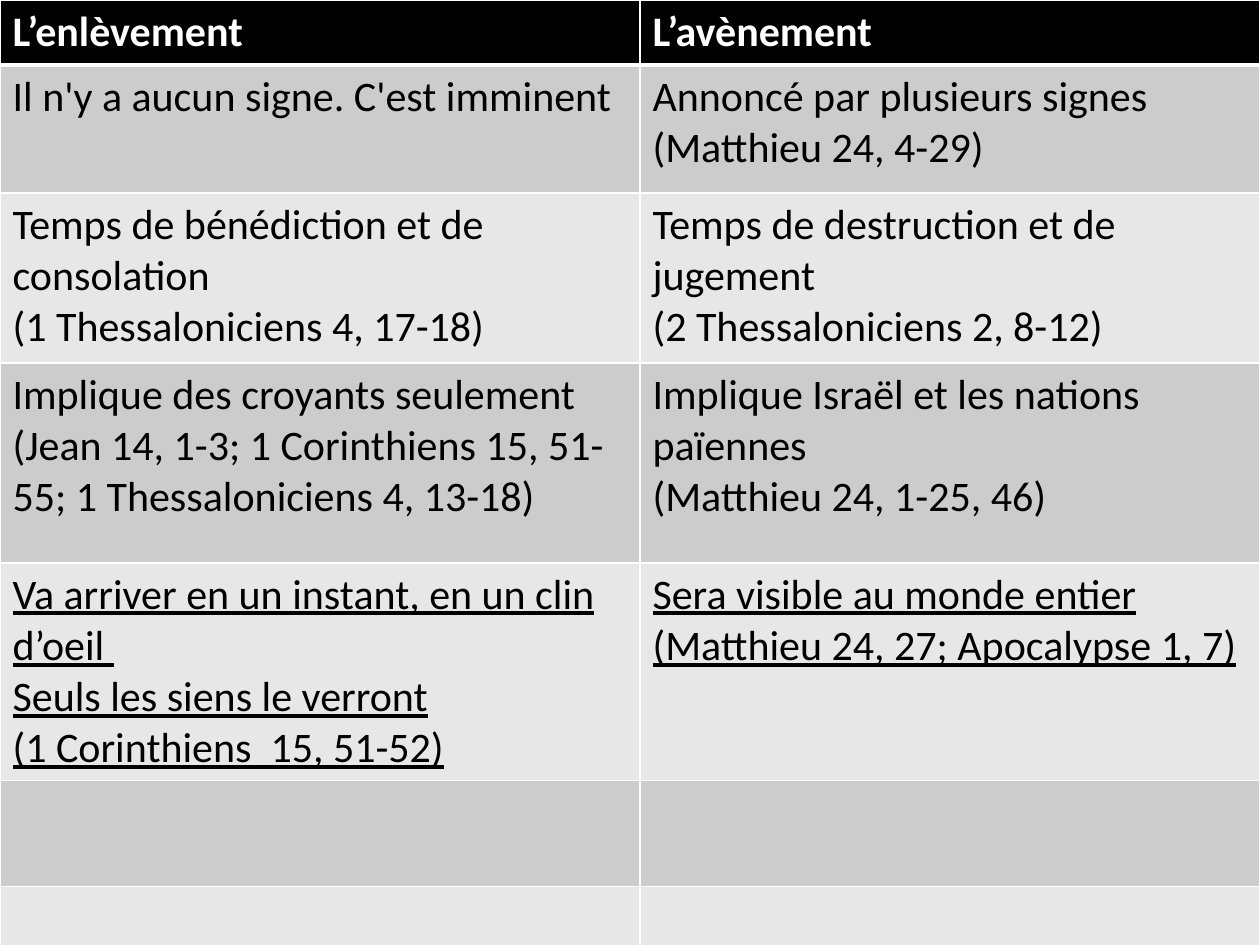
from lxml.etree import SubElement as Sub
from pptx import Presentation
from pptx.dml.color import RGBColor as Rgb
from pptx.oxml.ns import qn
from pptx.util import Pt

SCALE = 914400 / 126
HUES = {"head": "000000", "dark": "CCCCCC", "light": "E7E7E7",
        "ink": "000000", "white": "FFFFFF"}
COLS = [640, 620]
ROWS = [65, 128, 170, 200, 170, 106, 106]
CELLS = [
    (["L’enlèvement"], ["L’avènement"]),
    (["Il n'y a aucun signe. C'est imminent"],
     ["Annoncé par plusieurs signes", "(Matthieu 24, 4-29)"]),
    (["Temps de bénédiction et de consolation", "(1 Thessaloniciens 4, 17-18)"],
     ["Temps de destruction et de jugement", "(2 Thessaloniciens 2, 8-12)"]),
    (["Implique des croyants seulement",
      "(Jean 14, 1-3; 1 Corinthiens 15, 51-55; 1 Thessaloniciens 4, 13-18)"],
     ["Implique Israël et les nations païennes", "(Matthieu 24, 1-25, 46)"]),
    (["Va arriver en un instant, en un clin d’oeil ", "Seuls les siens le verront",
      "(1 Corinthiens  15, 51-52)"],
     ["Sera visible au monde entier", "(Matthieu 24, 27; Apocalypse 1, 7)"]),
    ([], []),
    ([], []),
]
LINED = 4


def px(num):
    return round(num * SCALE)


def write(frame, lines, hue="ink", size=24, face="Calibri", bold=False, under=False):
    for i, line in enumerate(lines):
        para = frame.paragraphs[0] if i == 0 else frame.add_paragraph()
        run = para.add_run()
        run.text = line
        font = run.font
        font.name, font.size = face, Pt(size)
        font.bold, font.underline = bold, under
        font.color.rgb = Rgb.from_string(HUES[hue])


class Deck:
    """Holds the style and the current slide."""

    def __init__(self, wide, high):
        self.prs = Presentation()
        self.prs.slide_width, self.prs.slide_height = px(wide), px(high)
        self.slide = self.prs.slides.add_slide(self.prs.slide_layouts[6])

    def edge(self, cell, side, width):
        line = Sub(cell._tc.get_or_add_tcPr(), qn(f"a:ln{side}"), w=str(Pt(width)))
        Sub(Sub(line, qn("a:solidFill")), qn("a:srgbClr"), val=HUES["white"])

    def cell(self, cell, lines, fill, top, base, **form):
        for side, width in zip("LRTB", (1, 1, top, base)):
            self.edge(cell, side, width)
        cell.fill.solid()
        cell.fill.fore_color.rgb = Rgb.from_string(HUES[fill])
        write(cell.text_frame, lines, **form)

    def table(self, left, top, cols, rows, cells):
        grid = self.slide.shapes.add_table(
            len(rows), len(cols), px(left), px(top), px(sum(cols)), px(sum(rows))).table
        for col, wide in zip(grid.columns, cols):
            col.width = px(wide)
        for r, (row, high) in enumerate(zip(cells, rows)):
            grid.rows[r].height = px(high)
            head = r == 0
            fill = "head" if head else "dark" if r % 2 else "light"
            for c, lines in enumerate(row):
                self.cell(grid.cell(r, c), lines, fill,
                          top=3 if r == 1 else 1, base=3 if head else 1,
                          hue="white" if head else "ink", bold=head, under=r == LINED)


def main():
    deck = Deck(1260, 945)
    deck.table(0, 0, COLS, ROWS, CELLS)
    deck.prs.save("out.pptx")


if __name__ == "__main__":
    main()
